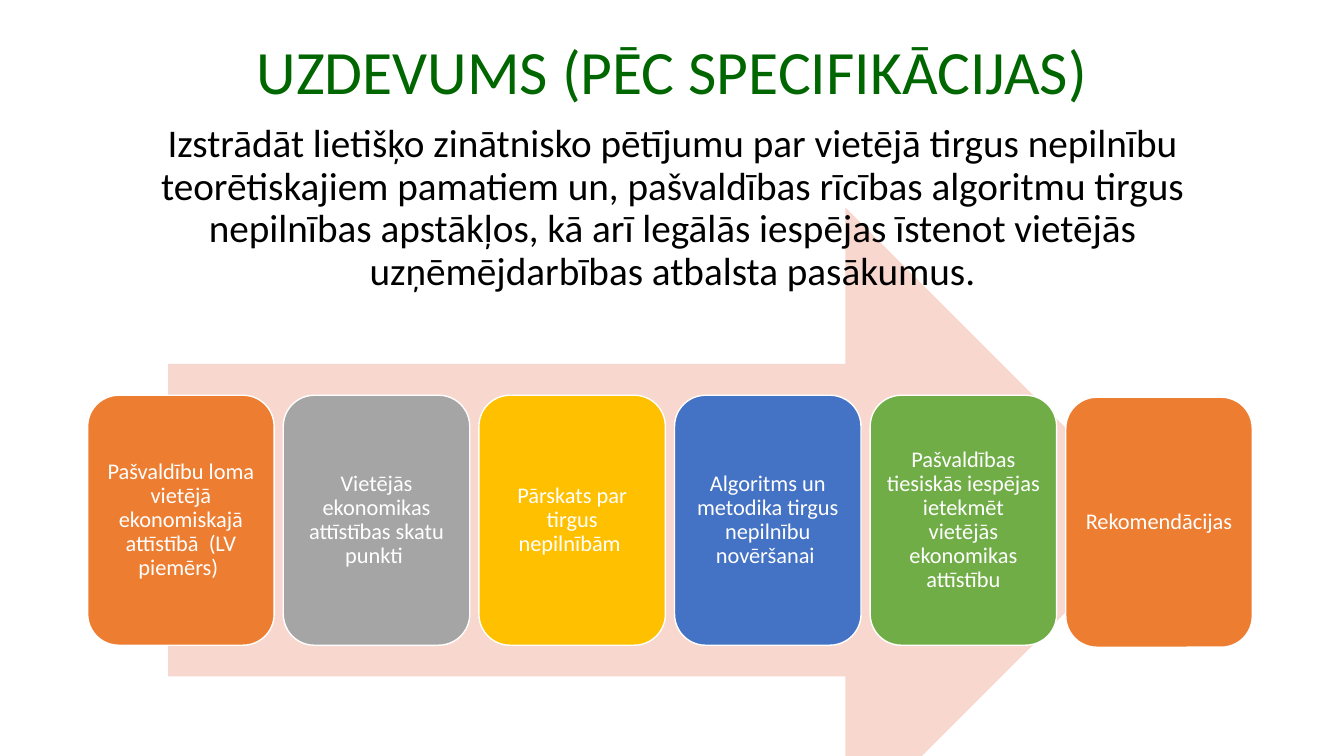
from dataclasses import dataclass

from lxml import etree
from pptx import Presentation
from pptx.dml.color import RGBColor
from pptx.enum.shapes import MSO_SHAPE
from pptx.enum.text import MSO_ANCHOR, MSO_AUTO_SIZE, PP_ALIGN
from pptx.oxml.ns import qn
from pptx.shapes.autoshape import Shape
from pptx.slide import Slide
from pptx.util import Cm, Pt

ARROW, CARD = MSO_SHAPE.RIGHT_ARROW, MSO_SHAPE.ROUNDED_RECTANGLE
TOP, MIDDLE = MSO_ANCHOR.TOP, MSO_ANCHOR.MIDDLE
CENTER, NO_FIT = PP_ALIGN.CENTER, MSO_AUTO_SIZE.NONE
WHITE = "FFFFFF"


@dataclass
class Box:
    left: float
    top: float
    width: float
    height: float


@dataclass
class Task:
    text: str
    fill: str
    drop: float = 0


TASKS = [
    Task("Pašvaldību loma vietējā ekonomiskajā attīstībā  (LV piemērs) ", "ED7D31"),
    Task("Vietējās ekonomikas attīstības skatu punkti ", "A5A5A5"),
    Task("Pārskats par tirgus nepilnībām ", "FFC000"),
    Task("Algoritms un metodika tirgus nepilnību novēršanai ", "4472C4"),
    Task("Pašvaldības tiesiskās iespējas ietekmēt vietējās ekonomikas attīstību",
         "70AD47"),
    Task("Rekomendācijas", "ED7D31", 0.05),
]
FIRST = Box(2.21, 9.96, 4.7, 6.3)
PITCH = 4.93


def color(code: str) -> RGBColor:
    return RGBColor.from_string(code)


def place(shape: Shape, box: Box) -> None:
    shape.left, shape.top = Cm(box.left), Cm(box.top)
    shape.width, shape.height = Cm(box.width), Cm(box.height)


def write(shape: Shape, text: str, size: int, ink: str, anchor: MSO_ANCHOR) -> None:
    frame = shape.text_frame
    frame.text = text
    frame.word_wrap = True
    frame.auto_size = NO_FIT
    frame.vertical_anchor = anchor
    line = frame.paragraphs[0]
    line.alignment = CENTER
    line.line_spacing = 0.9
    line.font.name = "Calibri"
    line.font.size = Pt(size)
    line.font.color.rgb = color(ink)


def draw(slide: Slide, kind: MSO_SHAPE, box: Box, fill: str) -> Shape:
    shape = slide.shapes.add_shape(kind, 0, 0, 0, 0)
    place(shape, box)
    shape.shadow.inherit = False
    shape.fill.solid()
    shape.fill.fore_color.rgb = color(fill)
    shape.line.fill.background()
    return shape


def add_card(slide: Slide, index: int, task: Task) -> None:
    box = Box(FIRST.left + index * PITCH, FIRST.top + task.drop,
              FIRST.width, FIRST.height)
    card = draw(slide, CARD, box, task.fill)
    card.line.color.rgb = color(WHITE)
    card.line.width = Pt(1)
    write(card, task.text, 16, WHITE, MIDDLE)
    frame = card.text_frame
    frame.margin_left = frame.margin_right = Cm(0.18)
    frame.margin_top = frame.margin_bottom = Cm(0.18)


def main() -> None:
    deck = Presentation()
    deck.slide_width, deck.slide_height = Cm(33.87), Cm(19.05)
    slide = deck.slides.add_slide(deck.slide_layouts[1])

    title, body = slide.placeholders
    place(title, Box(2.34, 0.03, 29.21, 3.68))
    write(title, "UZDEVUMS (PĒC SPECIFIKĀCIJAS)", 44, "006600", MIDDLE)

    place(body, Box(2.34, 3, 29.21, 6.32))
    write(body, "Izstrādāt lietišķo zinātnisko pētījumu par vietējā tirgus "
          "nepilnību teorētiskajiem pamatiem un, pašvaldības rīcības algoritmu "
          "tirgus nepilnības apstākļos, kā arī legālās iespējas īstenot vietējās "
          "uzņēmējdarbības atbalsta pasākumus.", 28, "000000", TOP)
    line = body.text_frame.paragraphs[0]
    line.space_before = Pt(10)
    props = line._p.get_or_add_pPr()
    props.set("marL", "0")
    props.set("indent", "0")
    bullet = etree.Element(qn("a:buNone"))
    props.find(qn("a:defRPr")).addprevious(bullet)

    arrow = draw(slide, ARROW, Box(4.24, 5.23, 24.94, 15.75), "F8D7CE")
    title.element.addprevious(arrow.element)  # the text lies over the arrow

    for index, task in enumerate(TASKS):
        add_card(slide, index, task)
    deck.save("out.pptx")


if __name__ == "__main__":
    main()
